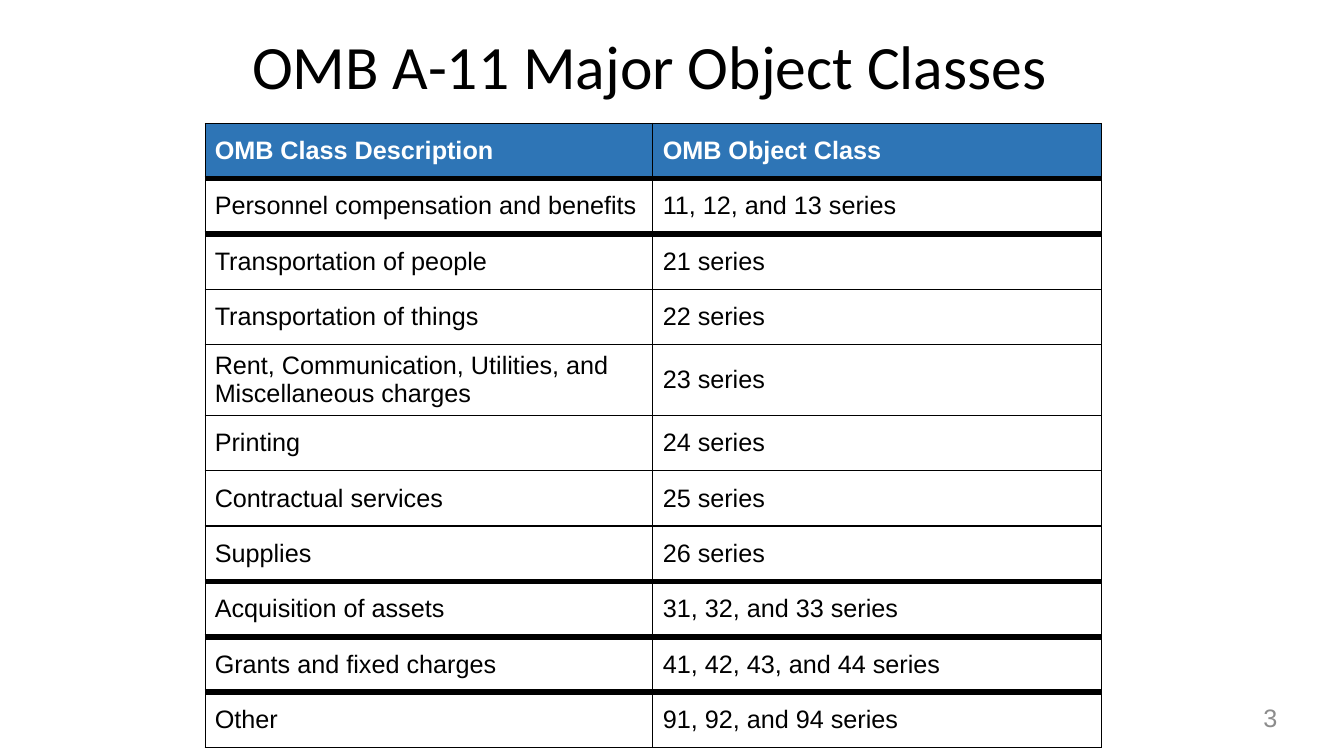
from dataclasses import dataclass
from lxml.etree import SubElement
from pptx import Presentation
from pptx.dml.color import RGBColor
from pptx.enum.text import MSO_ANCHOR, PP_ALIGN
from pptx.oxml import parse_xml
from pptx.oxml.ns import nsdecls, qn
from pptx.util import Inches, Pt


@dataclass(frozen=True)
class Theme:
    black: str = "000000"
    white: str = "FFFFFF"
    blue: str = "2E75B6"
    gray: str = "8C8C8C"
    title_font: str = "Calibri"
    body_font: str = "Arial"
    title_size: int = 44
    body_size: int = 18
    outer: float = 0.25
    inner: float = 1
    heavy: float = 4.5


T = Theme()
W, H = 13.33, 7.5

HEADER = ("OMB Class Description", "OMB Object Class")
# Each group is set off by heavy rules
GROUPS = [
    [("Personnel compensation and benefits", "11, 12, and 13 series")],
    [("Transportation of people", "21 series"),
     ("Transportation of things", "22 series"),
     ("Rent, Communication, Utilities, and Miscellaneous charges", "23 series"),
     ("Printing", "24 series"),
     ("Contractual services", "25 series"),
     ("Supplies", "26 series")],
    [("Acquisition of assets", "31, 32, and 33 series")],
    [("Grants and fixed charges", "41, 42, 43, and 44 series")],
    [("Other", "91, 92, and 94 series")],
]


def write(tf, text, color, align=PP_ALIGN.LEFT, **formats):
    p = tf.paragraphs[0]
    p.alignment = align
    r = p.add_run()
    r.text = text
    for name, value in formats.items():
        setattr(r.font, name, value)
    r.font.color.rgb = RGBColor.from_string(color)


def add_label(s, box, text, color, align=PP_ALIGN.LEFT, **formats):
    tf = s.shapes.add_textbox(*map(Inches, box)).text_frame
    settings = dict(word_wrap=True, margin_left=0, margin_top=0,
                    margin_right=0, margin_bottom=0)
    for name, value in settings.items():
        setattr(tf, name, value)
    write(tf, text, color, align, **formats)


def set_borders(cell, widths):
    """Widths in points: left, right, top, bottom."""
    tcPr = cell._tc.get_or_add_tcPr()
    for i, (side, width) in enumerate(zip("LRTB", widths)):
        ln = parse_xml(f'<a:ln{side} {nsdecls("a")} w="{Pt(width)}"/>')
        fill = SubElement(ln, qn("a:solidFill"))
        SubElement(fill, qn("a:srgbClr"), val=T.black)
        tcPr.insert(i, ln)


def add_class_table(s, box):
    groups = [[HEADER]] + GROUPS
    rows = [row for group in groups for row in group]
    # Horizontal rules: one above each row, and one below the last
    rules = [T.inner if i else T.heavy
             for group in groups for i in range(len(group))] + [T.outer]
    rules[0] = T.outer
    x, y, w, h = box
    table = s.shapes.add_table(len(rows), len(HEADER),
                               *map(Inches, box)).table
    table.first_row = table.horz_banding = False
    for col in table.columns:
        col.width = Inches(w / len(HEADER))
    for i, row in enumerate(rows):
        table.rows[i].height = Inches(h / len(rows))
        head = i == 0
        for j, text in enumerate(row):
            cell = table.cell(i, j)
            cell.vertical_anchor = MSO_ANCHOR.MIDDLE
            cell.fill.solid()
            cell.fill.fore_color.rgb = RGBColor.from_string(
                T.blue if head else T.white)
            sides = (T.inner, T.outer) if j else (T.outer, T.inner)
            set_borders(cell, (*sides, rules[i], rules[i + 1]))
            write(cell.text_frame, text, T.white if head else T.black,
                  name=T.body_font, size=Pt(T.body_size), bold=head)


def add_table_slide(prs):
    s = prs.slides.add_slide(prs.slide_layouts[6])
    # Title
    add_label(s, (2.5, 0.28, 10.35, H * 0.1), "OMB A-11 Major Object Classes",
              T.black, name=T.title_font, size=Pt(T.title_size))
    # Object classes
    add_class_table(s, (2.03, 1.22, W * 2 / 3, 6.05))
    # Slide number
    add_label(s, (9.6, 6.97, 3.07, H * 0.04), "3", T.gray, PP_ALIGN.RIGHT,
              name=T.body_font, size=Pt(T.body_size))


def main():
    prs = Presentation()
    prs.slide_width, prs.slide_height = Inches(W), Inches(H)
    add_table_slide(prs)
    prs.save("out.pptx")


if __name__ == "__main__":
    main()
